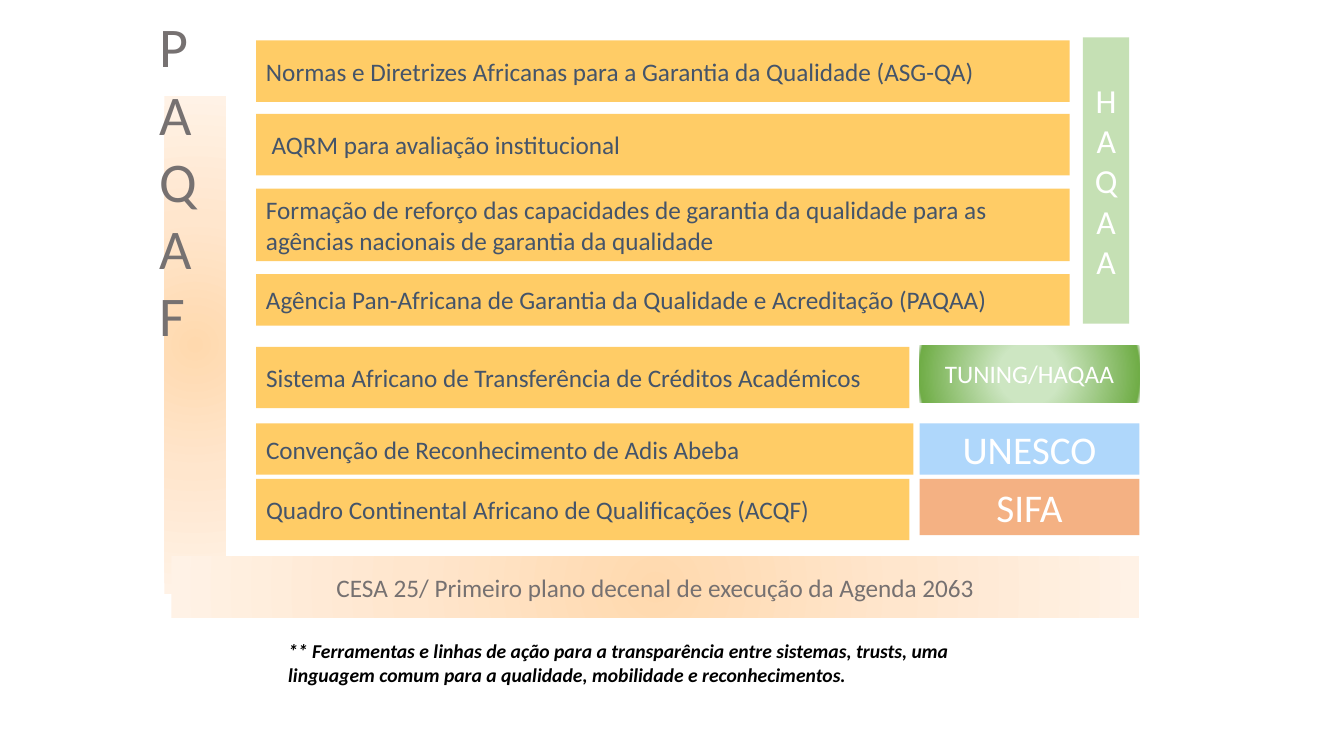
from lxml import etree
from pptx import Presentation
from pptx.dml.color import RGBColor
from pptx.enum import shapes, text
from pptx.oxml import parse_xml
from pptx.util import Inches, Pt

NAMESPACE = "http://schemas.openxmlformats.org/drawingml/2006/main"
PEACH = [(0, "FFD9AE"), (50, "FFE6CD"), (100, "FFF2E6")]
GREEN = [(27, "CDE6C2"), (97, "70AD47"), (100, "E6F2E1")]


def add_block(place, wording, fill, size=18, color="FFFFFF", align="CENTER"):
    """Add a borderless rectangle; fill is a hex string or a list of radial gradient stops."""
    box = page.shapes.add_shape(shapes.MSO_SHAPE.RECTANGLE, *map(Inches, place))
    box.shadow.inherit = False
    box.line.fill.background()
    box.fill.solid()
    if isinstance(fill, str):
        box.fill.fore_color.rgb = RGBColor.from_string(fill)
    else:
        stops = "".join(f'<a:gs pos="{position * 1000}"><a:srgbClr val="{shade}"/></a:gs>'
                        for position, shade in fill)
        gradient = parse_xml(
            f'<a:gradFill xmlns:a="{NAMESPACE}" rotWithShape="1"><a:gsLst>{stops}</a:gsLst>'
            '<a:path path="circle"><a:fillToRect l="50000" t="50000" r="50000" b="50000"/>'
            '</a:path></a:gradFill>')
        properties = box.element.spPr
        properties.replace(properties.find(f"{{{NAMESPACE}}}solidFill"), gradient)
    box.text_frame.vertical_anchor = text.MSO_ANCHOR.MIDDLE
    set_text(box, wording, size, color, align)


def set_text(box, wording, size, color, align="LEFT"):
    box.text_frame.word_wrap = True
    box.text_frame.text = wording
    para = box.text_frame.paragraphs[0]
    para.alignment = text.PP_ALIGN[align]
    for span in para.runs:
        span.font.name = "Calibri"
        span.font.size = Pt(size)
        span.font.color.rgb = RGBColor.from_string(color)


deck = Presentation()
deck.slide_width, deck.slide_height = Inches(13.33), Inches(7.5)
page = deck.slides.add_slide(deck.slide_layouts[6])

# Vertical PAQAF band
add_block((1.63, 0.95, 0.61, 4.94), "", PEACH)
pillar = page.shapes.add_textbox(Inches(1.48), Inches(0.07), Inches(1), Inches(4.37))
set_text(pillar, "PAQAF", 40, "767171")
pillar.text_frame._txBody.bodyPr.set("vert", "wordArtVert")

# Instruments: top, width, height, wording
instruments = [
    (0.4, 8.07, 0.61, "Normas e Diretrizes Africanas para a Garantia da Qualidade (ASG-QA)"),
    (1.13, 8.07, 0.61, " AQRM para avaliação institucional"),
    (1.87, 8.07, 0.72, "Formação de reforço das capacidades de garantia da qualidade para as "
                       "agências nacionais de garantia da qualidade"),
    (2.72, 8.07, 0.51, "Agência Pan-Africana de Garantia da Qualidade e Acreditação (PAQAA)"),
    (3.44, 6.48, 0.61, "Sistema Africano de Transferência de Créditos Académicos"),
    (4.2, 6.52, 0.51, "Convenção de Reconhecimento de Adis Abeba"),
    (4.75, 6.48, 0.61, "Quadro Continental Africano de Qualificações (ACQF)"),
]
for top, width, height, wording in instruments:
    add_block((2.54, top, width, height), wording, "FFCC66", color="44546A", align="LEFT")

# Partners beside the instruments
add_block((10.74, 0.37, 0.46, 2.84), "HAQAA", "C5E0B4", size=24)
partners = [
    (3.43, 0.56, "TUNING/HAQAA", GREEN, 18),
    (4.2, 0.51, "UNESCO", "AFD7FB", 28),
    (4.75, 0.56, "SIFA", "F4B183", 28),
]
for top, height, wording, fill, size in partners:
    add_block((9.12, top, 2.18, height), wording, fill, size)

# Base band and footnote
add_block((1.7, 5.52, 9.6, 0.61), "CESA 25/ Primeiro plano decenal de execução da Agenda 2063",
          PEACH, color="767171")
note = page.shapes.add_textbox(Inches(2.76), Inches(6.29), Inches(7.25), Inches(0.57))
set_text(note, "** Ferramentas e linhas de ação para a transparência entre sistemas, trusts, uma "
               "linguagem comum para a qualidade, mobilidade e reconhecimentos.", 14, "000000")
for span in note.text_frame.paragraphs[0].runs:
    span.font.bold = span.font.italic = True

deck.save("out.pptx")
